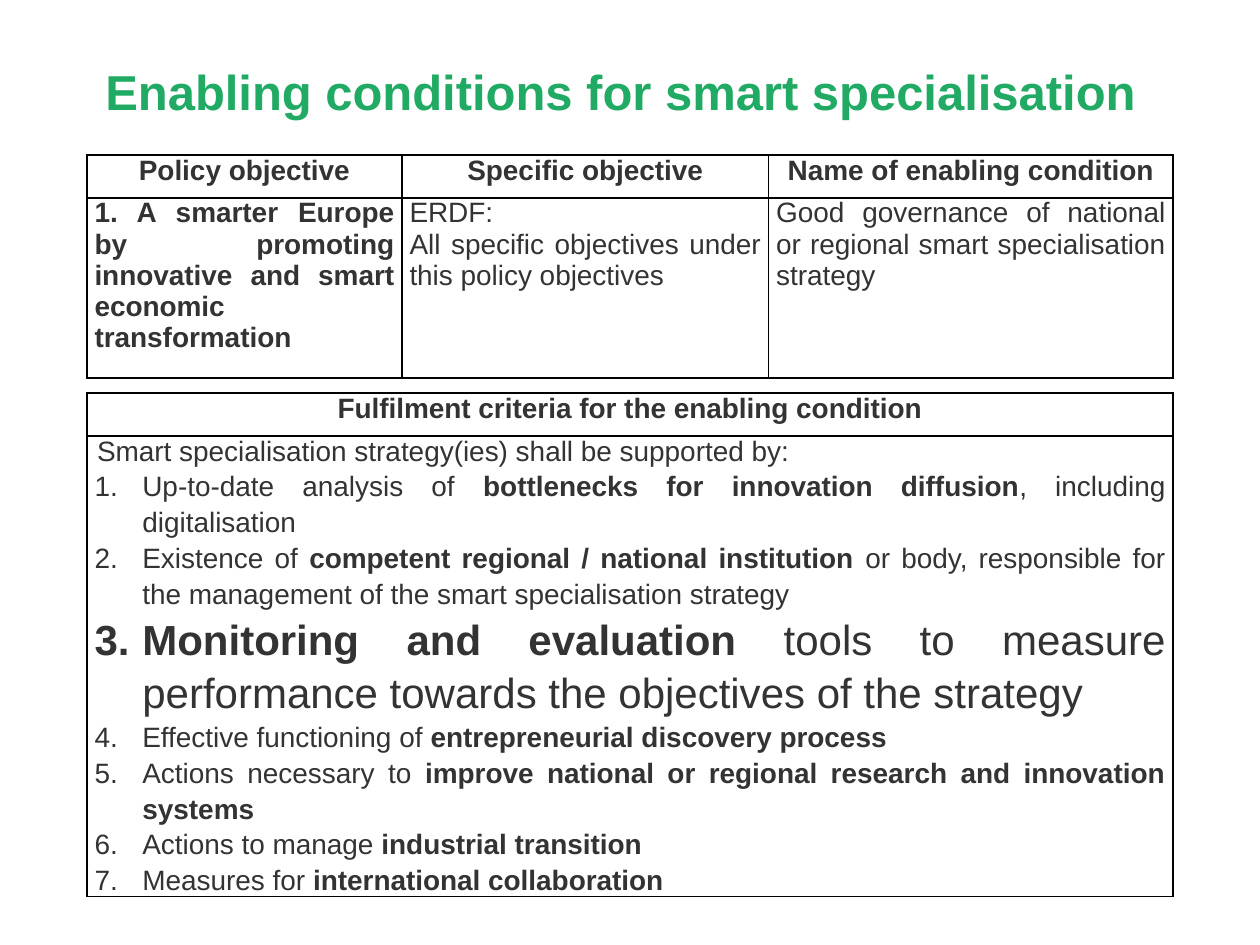
"""Build a slide on the enabling conditions for smart specialisation."""
from lxml.etree import SubElement
from pptx import Presentation
from pptx.dml.color import RGBColor
from pptx.enum.text import MSO_ANCHOR, PP_ALIGN
from pptx.oxml.ns import qn
from pptx.util import Inches, Pt

TITLE = "Enabling conditions for smart specialisation"
OBJECTIVES = {
    "Policy objective": ["**1. A smarter Europe by promoting innovative and smart economic transformation**"],
    "Specific objective": ["ERDF:", "All specific objectives under this policy objectives"],
    "Name of enabling condition": ["Good governance of national or regional smart specialisation strategy"],
}
CRITERIA_HEADING = "Fulfilment criteria for the enabling condition"
CRITERIA_INTRO = "Smart specialisation strategy(ies) shall be supported by:"
CRITERIA = [
    "Up-to-date analysis of **bottlenecks for innovation diffusion**, including digitalisation",
    "Existence of **competent regional / national institution** or body, responsible for "
    "the management of the smart specialisation strategy",
    "**Monitoring and evaluation** tools to measure performance towards the objectives of the strategy",
    "Effective functioning of **entrepreneurial discovery process**",
    "Actions necessary to **improve national or regional research and innovation systems**",
    "Actions to manage **industrial transition**",
    "Measures for **international collaboration**",
]
HIGHLIGHTED = 2

THEME = {
    "font": "Arial",
    "title": RGBColor(0x20, 0xAA, 0x63),
    "text": RGBColor(0x33, 0x33, 0x33),
    "border": "000000",
    "title_size": Pt(28),
    "body_size": Pt(16),
    "highlight_size": Pt(24),
}
LEFT = 0.69
HEADER_HEIGHT = 0.34
INDENT = 0.38


def style_font(font, size, color):
    font.name = THEME["font"]
    font.size = size
    font.color.rgb = color


def write(para, text, align=PP_ALIGN.JUSTIFY, size=THEME["body_size"]):
    """Write text in which ** switches bold on and off."""
    para.alignment = align
    style_font(para.font, size, THEME["text"])
    for index, part in enumerate(text.split("**")):
        if part:
            span = para.add_run()
            span.text = part
            span.font.bold = index % 2 == 1
            style_font(span.font, size, THEME["text"])


def set_indent(para, left, first=0):
    properties = para._p.get_or_add_pPr()
    properties.set("marL", str(Inches(left)))
    properties.set("indent", str(Inches(first)))
    return properties


def number(para):
    para.line_spacing = 1.15
    properties = set_indent(para, INDENT, -INDENT)
    SubElement(properties, qn("a:buFont"), typeface="+mj-lt")
    SubElement(properties, qn("a:buAutoNum"), type="arabicPeriod")


def style_cell(cell):
    cell.margin_left = cell.margin_right = Inches(0.06)
    cell.margin_top = cell.margin_bottom = 0
    properties = cell._tc.get_or_add_tcPr()
    for side in ("lnL", "lnR", "lnT", "lnB"):
        line = SubElement(properties, qn(f"a:{side}"), w=str(Pt(1)))
        fill = SubElement(line, qn("a:solidFill"))
        SubElement(fill, qn("a:srgbClr"), val=THEME["border"])
    cell.fill.background()


def add_grid(page, top, widths, body_height, headings):
    heights = (HEADER_HEIGHT, body_height)
    frame = page.shapes.add_table(2, len(widths), Inches(LEFT), Inches(top),
                                  Inches(sum(widths)), Inches(sum(heights)))
    table = frame.table
    table.first_row = table.horz_banding = False
    for column, width in zip(table.columns, widths):
        column.width = Inches(width)
    for row, height in zip(table.rows, heights):
        row.height = Inches(height)
    for cell in table.iter_cells():
        style_cell(cell)
    for index, heading in enumerate(headings):
        para = table.cell(0, index).text_frame.paragraphs[0]
        write(para, f"**{heading}**", PP_ALIGN.CENTER)
        para.space_before = para.space_after = Pt(3)
    return table


def fill_cell(cell, texts):
    frame = cell.text_frame
    for index, text in enumerate(texts):
        write(frame.add_paragraph() if index else frame.paragraphs[0], text)


def main():
    deck = Presentation()
    deck.slide_width, deck.slide_height = Inches(10), Inches(7.5)
    page = deck.slides.add_slide(deck.slide_layouts[5])

    title = page.shapes.title
    title.left, title.top, title.width, title.height = map(Inches, (0.12, 0.44, 9.61, 0.57))
    title.text_frame.text = TITLE
    title.text_frame.vertical_anchor = MSO_ANCHOR.MIDDLE
    para = title.text_frame.paragraphs[0]
    para.alignment = PP_ALIGN.CENTER
    style_font(para.font, THEME["title_size"], THEME["title"])
    para.font.bold = True

    objectives = add_grid(page, 1.23, (2.5, 2.91, 3.21), 1.43, OBJECTIVES)
    for index, texts in enumerate(OBJECTIVES.values()):
        fill_cell(objectives.cell(1, index), texts)

    criteria = add_grid(page, 3.12, (8.62,), 3.65, [CRITERIA_HEADING])
    body = criteria.cell(1, 0)
    fill_cell(body, [CRITERIA_INTRO])
    set_indent(body.text_frame.paragraphs[0], 0.02)
    for index, text in enumerate(CRITERIA):
        para = body.text_frame.add_paragraph()
        size = THEME["highlight_size" if index == HIGHLIGHTED else "body_size"]
        write(para, text, size=size)
        number(para)

    deck.save("out.pptx")


if __name__ == "__main__":
    main()
